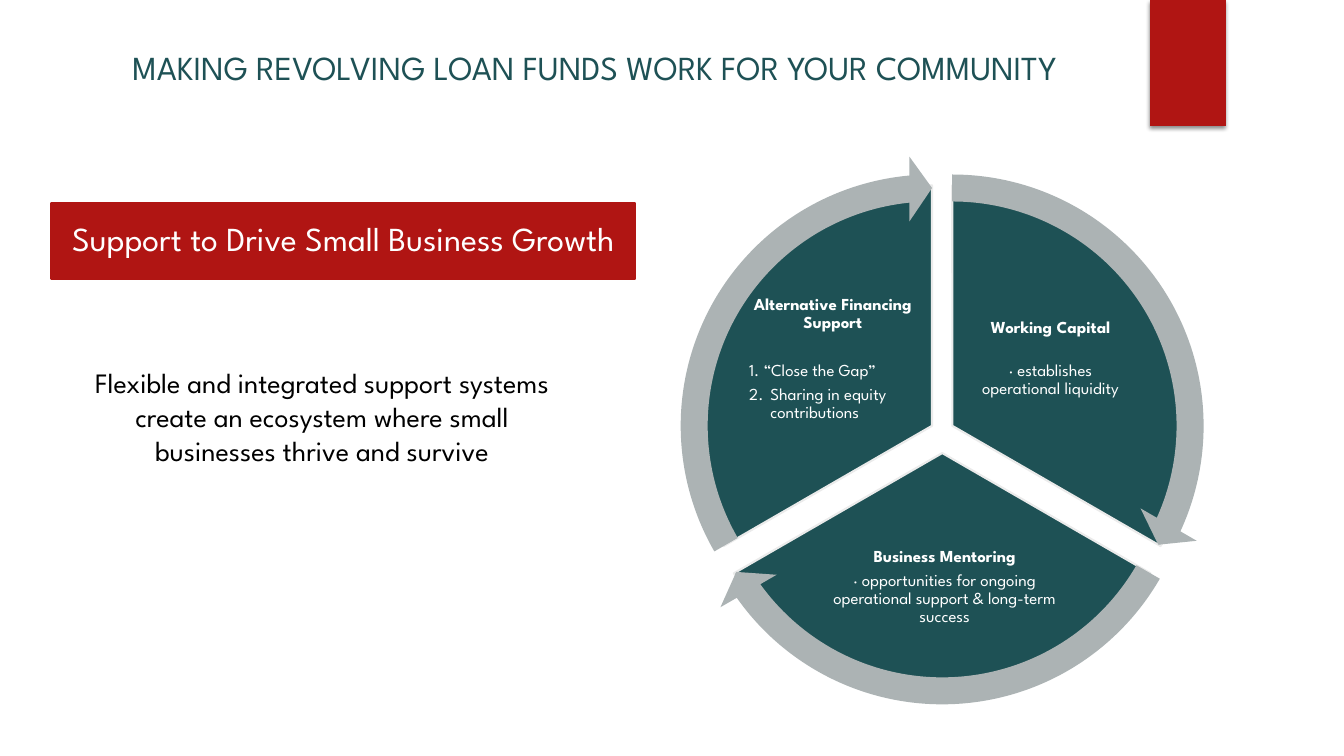
from pptx import Presentation
from pptx.dml.color import RGBColor
from pptx.enum.shapes import MSO_SHAPE
from pptx.enum.text import MSO_ANCHOR, PP_ALIGN
from pptx.oxml import parse_xml
from pptx.util import Emu, Inches, Pt

RECTANGLE, PIE, ARROW = MSO_SHAPE.RECTANGLE, MSO_SHAPE.PIE, MSO_SHAPE.CIRCULAR_ARROW
TOP, MIDDLE = MSO_ANCHOR.TOP, MSO_ANCHOR.MIDDLE
LEFT, CENTER = PP_ALIGN.LEFT, PP_ALIGN.CENTER

COLORS = {
    "red": "B01513",
    "teal": "1E5155",
    "gray": "ACB3B4",
    "edge": "EBEBEB",
    "white": "FFFFFF",
    "black": "000000",
}
SHADOW = (
    '<a:effectLst xmlns:a="http://schemas.openxmlformats.org/drawingml/2006/main">'
    '<a:outerShdw blurRad="38100" dist="25400" dir="5400000" rotWithShape="0">'
    '<a:srgbClr val="000000"><a:alpha val="45000"/></a:srgbClr>'
    "</a:outerShdw></a:effectLst>"
)
ASPECT = 16 / 9
PIE_SIZE, ARROW_SIZE = 35.78, 40.21


class SlideBuilder:
    font = "League Spartan"

    def __init__(self, presentation):
        self.width = presentation.slide_width
        self.height = presentation.slide_height
        self.slide = presentation.slides.add_slide(presentation.slide_layouts[6])

    def place(self, left, top, width, height):
        return (
            Emu(round(self.width * left / 100)),
            Emu(round(self.height * top / 100)),
            Emu(round(self.width * width / 100)),
            Emu(round(self.height * height / 100)),
        )

    def shape(self, kind, area, fill, line=None, adjustments=()):
        shape = self.slide.shapes.add_shape(kind, *self.place(*area))
        shape.shadow.inherit = False
        shape.fill.solid()
        shape.fill.fore_color.rgb = RGBColor.from_string(COLORS[fill])
        if line:
            shape.line.color.rgb = RGBColor.from_string(COLORS[line])
            shape.line.width = Pt(1.5)
        else:
            shape.line.fill.background()
        for index, value in enumerate(adjustments):
            shape.adjustments[index] = value
        return shape

    def disc(self, kind, center, size, fill, line, adjustments):
        height = size * ASPECT
        area = (center[0] - size / 2, center[1] - height / 2, size, height)
        return self.shape(kind, area, fill, line, adjustments)

    def cast_shadow(self, shape):
        effects = parse_xml(SHADOW)
        properties = shape.element.spPr
        properties.replace(properties.find(effects.tag), effects)

    def textbox(self, area):
        return self.slide.shapes.add_textbox(*self.place(*area))

    def set_text(self, shape, paragraphs, size, color, anchor=TOP, insets=(0.1, 0.05), spacing=None):
        frame = shape.text_frame
        frame.word_wrap = True
        frame.vertical_anchor = anchor
        frame.margin_left = frame.margin_right = Inches(insets[0])
        frame.margin_top = frame.margin_bottom = Inches(insets[1])
        for index, (text, bold, alignment, gap) in enumerate(paragraphs):
            paragraph = frame.paragraphs[0] if index == 0 else frame.add_paragraph()
            paragraph.text = text
            paragraph.alignment = alignment
            paragraph.space_after = Pt(gap)
            if spacing:
                paragraph.line_spacing = spacing
            if alignment == LEFT:
                properties = paragraph._p.get_or_add_pPr()
                properties.set("marL", str(Inches(0.21)))
                properties.set("indent", str(-Inches(0.21)))
            paragraph.font.name = self.font
            paragraph.font.size = Pt(size)
            paragraph.font.bold = bold
            paragraph.font.color.rgb = RGBColor.from_string(COLORS[color])


SECTORS = [
    {
        "center": (70.86, 56.33),
        "angles": (162, 18),
        "arrow": (14.73, 161.99),
        "area": (71.79, 38, 12.75, 18.93),
        "text": [
            ("Working Capital", True, CENTER, 17.8),
            ("· establishes\voperational liquidity", False, CENTER, 0),
        ],
    },
    {
        "center": (70.11, 59.93),
        "angles": (18, 90),
        "arrow": (86.72, 18.01),
        "area": (60.69, 69.33, 19.2, 16.67),
        "text": [
            ("Business Mentoring", True, CENTER, 4.2),
            ("· opportunities for ongoing operational support & long-term success", False, CENTER, 0),
        ],
    },
    {
        "center": (69.35, 56.33),
        "angles": (90, 162),
        "arrow": (158.73, 90),
        "area": (55.59, 38, 12.75, 18.93),
        "text": [
            ("Alternative Financing Support", True, CENTER, 21.4),
            ("1. “Close the Gap”", False, LEFT, 4.2),
            ("2.\tSharing in equity contributions", False, LEFT, 0),
        ],
    },
]


def main():
    presentation = Presentation()
    presentation.slide_width = Inches(13.33)
    presentation.slide_height = Inches(7.5)
    builder = SlideBuilder(presentation)

    builder.cast_shadow(builder.shape(RECTANGLE, (85.58, 0, 5.63, 16.67), "red"))
    title = builder.textbox((3.15, 5.6, 82.2, 21.47))
    builder.set_text(
        title, [("MAKING REVOLVING LOAN FUNDS WORK FOR YOUR COMMUNITY", False, CENTER, 0)], 24, "teal"
    )

    banner = builder.shape(RECTANGLE, (3.83, 26.8, 43.43, 10.13), "red", "red")
    builder.set_text(
        banner, [("Support to Drive Small Business Growth", False, CENTER, 0)],
        24, "white", MIDDLE, (0.19, 0.11), 0.9,
    )

    for sector in SECTORS:
        builder.disc(PIE, sector["center"], PIE_SIZE, "teal", "edge", sector["angles"])
        label = builder.textbox(sector["area"])
        builder.set_text(label, sector["text"], 12, "white", MIDDLE, (0.02, 0.02), 0.9)
    for sector in SECTORS:
        adjustments = (0.05, 3.28, *sector["arrow"], 0.06)
        builder.disc(ARROW, sector["center"], ARROW_SIZE, "gray", None, adjustments)

    summary = builder.textbox((5.03, 47.73, 37.88, 19.33))
    builder.set_text(
        summary,
        [(
            "Flexible and integrated support systems create an ecosystem "
            "where small businesses thrive and survive", False, CENTER, 0,
        )],
        20, "black",
    )
    presentation.save("out.pptx")


if __name__ == "__main__":
    main()
